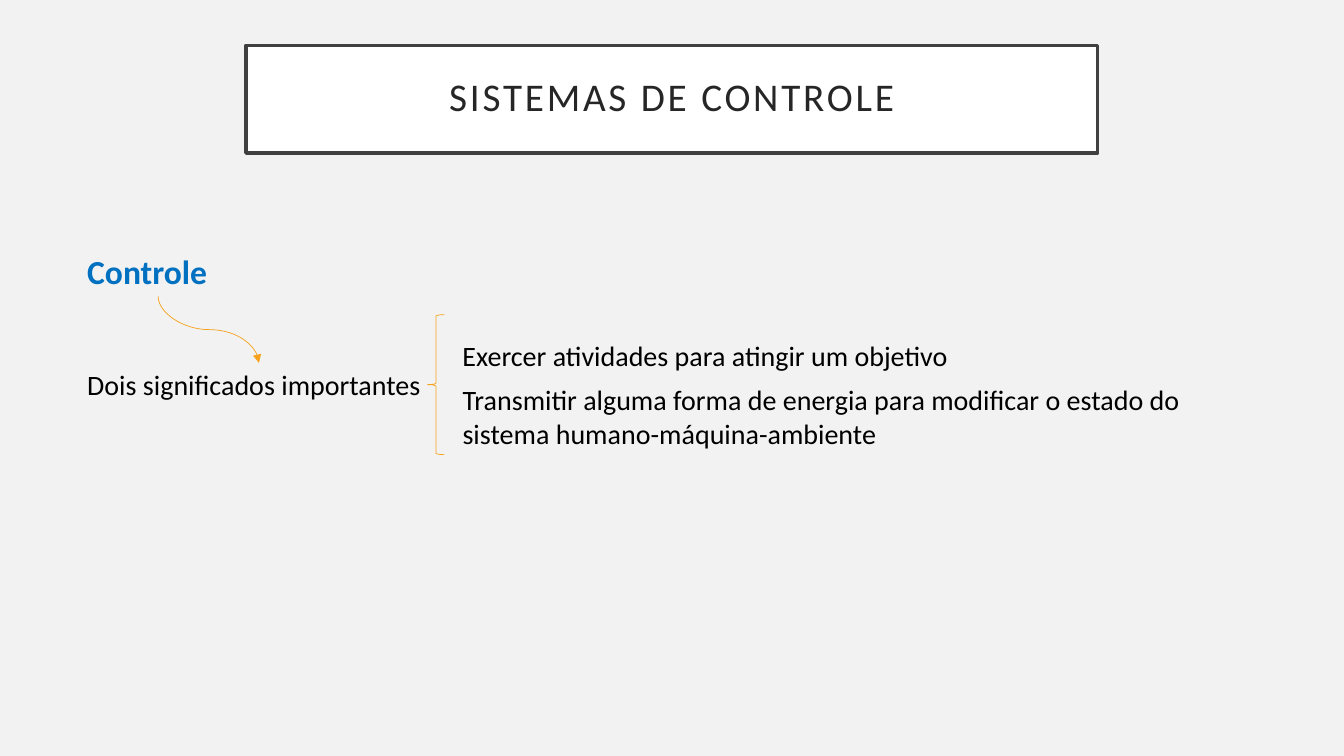
from lxml import etree
from pptx import Presentation
from pptx.dml.color import RGBColor
from pptx.enum.shapes import MSO_CONNECTOR, MSO_SHAPE
from pptx.enum.text import MSO_ANCHOR, MSO_AUTO_SIZE, PP_ALIGN
from pptx.oxml.ns import qn
from pptx.util import Pt

RECTANGLE = MSO_SHAPE.RECTANGLE
LEFT_BRACE = MSO_SHAPE.LEFT_BRACE
CURVE = MSO_CONNECTOR.CURVE
MIDDLE = MSO_ANCHOR.MIDDLE
CENTER = PP_ALIGN.CENTER
GROW = MSO_AUTO_SIZE.SHAPE_TO_FIT_TEXT

FONT = "Calibri"
COLORS = {
    "background": "F2F2F2",
    "panel": "FFFFFF",
    "border": "404040",
    "title": "262626",
    "body": "000000",
    "keyword": "0070C0",
    "accent": "F6A21D",
}


def rgb(name):
    return RGBColor.from_string(COLORS[name])


def style_line(line, color, width):
    line.color.rgb = rgb(color)
    line.width = Pt(width)


def style_run(paragraph, size, color, bold=False):
    font = paragraph.runs[0].font
    font.name = FONT
    font.size = Pt(size)
    font.bold = bold
    font.color.rgb = rgb(color)


def add_title(slide, text, left, top, width, height):
    panel = slide.shapes.add_shape(RECTANGLE, Pt(left), Pt(top), Pt(width), Pt(height))
    panel.shadow.inherit = False
    panel.fill.solid()
    panel.fill.fore_color.rgb = rgb("panel")
    style_line(panel.line, "border", 2.5)
    frame = panel.text_frame
    frame.word_wrap = True
    frame.vertical_anchor = MIDDLE
    frame.margin_left = frame.margin_right = Pt(14.4)
    frame.margin_top = frame.margin_bottom = Pt(14.4)
    frame.text = text
    heading = frame.paragraphs[0]
    heading.alignment = CENTER
    heading.line_spacing = 0.9
    style_run(heading, 28, "title")
    heading.runs[0].font._element.set("spc", "200")


def add_label(slide, text, left, top, width, height,
              size=20, color="body", bold=False, wrap=False):
    label = slide.shapes.add_textbox(Pt(left), Pt(top), Pt(width), Pt(height))
    frame = label.text_frame
    frame.word_wrap = wrap
    frame.auto_size = GROW
    frame.text = text
    style_run(frame.paragraphs[0], size, color, bold)


def add_brace(slide, left, top, width, height):
    brace = slide.shapes.add_shape(LEFT_BRACE, Pt(left), Pt(top), Pt(width), Pt(height))
    brace.shadow.inherit = False
    brace.fill.background()
    style_line(brace.line, "accent", 0.5)


def add_curved_arrow(slide, start_x, start_y, end_x, end_y):
    center_x, center_y = (start_x + end_x) / 2, (start_y + end_y) / 2
    half_run, half_drop = (end_x - start_x) / 2, (end_y - start_y) / 2
    arrow = slide.shapes.add_connector(
        CURVE,
        Pt(center_x + half_drop), Pt(center_y - half_run),
        Pt(center_x - half_drop), Pt(center_y + half_run),
    )
    style_line(arrow.line, "accent", 0.5)
    properties = arrow._element.spPr
    properties.find(qn("a:xfrm")).set("rot", str(270 * 60000))
    outline = properties.find(qn("a:ln"))
    etree.SubElement(outline, qn("a:tailEnd")).set("type", "triangle")
    etree.SubElement(properties, qn("a:effectLst"))


def main():
    deck = Presentation()
    deck.slide_width, deck.slide_height = Pt(960), Pt(540)
    slide = deck.slides.add_slide(deck.slide_layouts[6])
    slide.background.fill.solid()
    slide.background.fill.fore_color.rgb = rgb("background")

    add_title(slide, "SISTEMAS DE CONTROLE", 175.7, 32.4, 608.4, 77)
    add_label(slide, "Dois significados importantes", 55.2, 259.2, 260.6, 31.5)
    add_label(slide, "Controle", 55.2, 175.7, 115.9, 36.3,
              size=24, color="keyword", bold=True)
    add_curved_arrow(slide, 113, 211.7, 185, 259.2)
    add_brace(slide, 305.3, 224.8, 12.2, 100)
    add_label(slide, "Exercer atividades para atingir um objetivo",
              323.3, 238.5, 362.9, 31.5)
    add_label(slide, "Transmitir alguma forma de energia para modificar o estado do "
              "sistema humano-máquina-ambiente",
              323.3, 270, 546.5, 55.7, wrap=True)

    deck.save("out.pptx")


if __name__ == "__main__":
    main()
